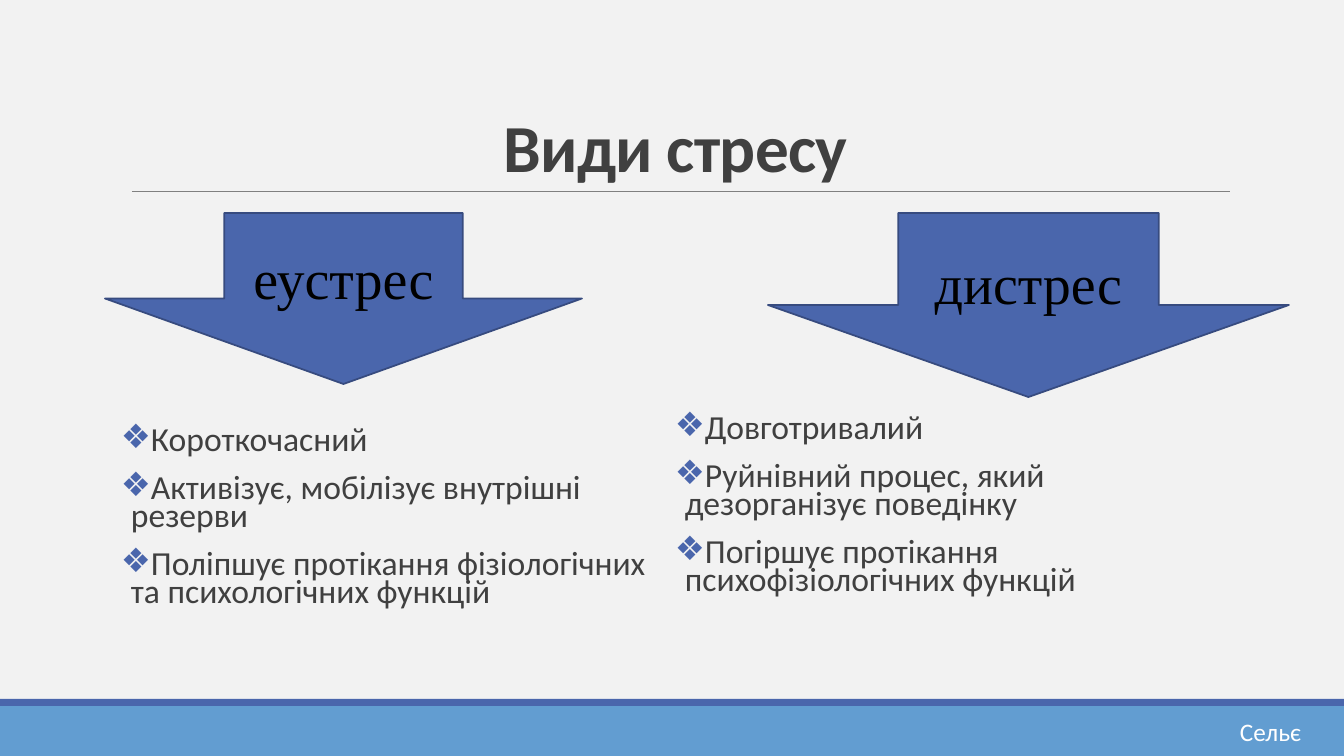
from lxml.etree import SubElement
from pptx import Presentation
from pptx.dml.color import RGBColor
from pptx.enum.shapes import MSO_CONNECTOR, MSO_SHAPE
from pptx.enum.text import MSO_ANCHOR, PP_ALIGN
from pptx.oxml.ns import qn
from pptx.util import Pt

TITLE = "Види стресу"
AUTHOR = "Сельє"
STRESS_KINDS = [
    {
        "name": "еустрес",
        "arrow": (105, 213, 477, 171),
        "traits_box": (121, 429, 554, 215),
        "traits": [
            "Короткочасний",
            "Активізує, мобілізує внутрішні резерви",
            "Поліпшує протікання фізіологічних та психологічних функцій",
        ],
    },
    {
        "name": "дистрес",
        "arrow": (768, 213, 521, 184),
        "traits_box": (675, 417, 554, 215),
        "traits": [
            "Довготривалий",
            "Руйнівний процес, який дезорганізує поведінку",
            "Погіршує протікання психофізіологічних функцій",
        ],
    },
]
COLORS = {
    "background": "F2F2F2",
    "footer": "629DD1",
    "accent": "4A66AC",
    "arrow_edge": "374B7F",
    "rule": "808080",
    "text": "404040",
    "arrow_text": "000000",
    "author": "FFFFFF",
}
WIDTH, HEIGHT = 1344, 756
FOOTER_TOP, STRIPE = 706, 7
HANG = 10
EMU_PER_PX = 914400 / 100.8


def px(*lengths):
    return [round(length * EMU_PER_PX) for length in lengths]


def color(key):
    return RGBColor.from_string(COLORS[key])


def add_block(slide, preset, box, fill, edge=None):
    block = slide.shapes.add_shape(preset, *px(*box))
    block.shadow.inherit = False
    block.fill.solid()
    block.fill.fore_color.rgb = color(fill)
    if edge:
        block.line.color.rgb = color(edge)
        block.line.width = Pt(1.25)
    else:
        block.line.fill.background()
    return block


def add_frame(slide, box, anchor=MSO_ANCHOR.TOP, wrap=True):
    frame = slide.shapes.add_textbox(*px(*box)).text_frame
    frame.word_wrap = wrap
    frame.vertical_anchor = anchor
    frame.margin_left = frame.margin_right = 0
    frame.margin_top = frame.margin_bottom = 0
    return frame


def add_text(paragraph, text, size, ink, font="Calibri", bold=False):
    run = paragraph.add_run()
    run.text = text
    run.font.name = font
    run.font.size = Pt(size)
    run.font.bold = bold
    run.font.color.rgb = color(ink)
    return run


def add_bullet(paragraph):
    properties = paragraph._p.get_or_add_pPr()
    hang, = px(HANG)
    properties.set("marL", str(hang))
    properties.set("indent", str(-hang))
    tint = SubElement(properties, qn("a:buClr"))
    SubElement(tint, qn("a:srgbClr"), val=COLORS["accent"])
    SubElement(properties, qn("a:buFont"), typeface="Calibri")
    SubElement(properties, qn("a:buChar"), char="❖")


def add_kind(slide, kind):
    arrow = add_block(slide, MSO_SHAPE.DOWN_ARROW, kind["arrow"], "accent", "arrow_edge")
    arrow.text_frame.vertical_anchor = MSO_ANCHOR.MIDDLE
    label = arrow.text_frame.paragraphs[0]
    label.alignment = PP_ALIGN.CENTER
    add_text(label, kind["name"], 40, "arrow_text", "Times New Roman")

    frame = add_frame(slide, kind["traits_box"])
    for index, trait in enumerate(kind["traits"]):
        paragraph = frame.add_paragraph() if index else frame.paragraphs[0]
        paragraph.line_spacing = 0.7
        paragraph.space_before = Pt(12)
        paragraph.space_after = Pt(2)
        add_bullet(paragraph)
        add_text(paragraph, trait, 24, "text")


def main():
    deck = Presentation()
    deck.slide_width, deck.slide_height = px(WIDTH, HEIGHT)
    slide = deck.slides.add_slide(deck.slide_layouts[6])
    slide.background.fill.solid()
    slide.background.fill.fore_color.rgb = color("background")

    add_block(slide, MSO_SHAPE.RECTANGLE, (0, FOOTER_TOP, WIDTH, HEIGHT - FOOTER_TOP), "footer")
    add_block(slide, MSO_SHAPE.RECTANGLE, (0, FOOTER_TOP - STRIPE, WIDTH, STRIPE), "accent")
    rule = slide.shapes.add_connector(MSO_CONNECTOR.STRAIGHT, *px(132, 191, 1230, 191))
    rule.line.color.rgb = color("rule")
    rule.line.width = Pt(0.5)
    SubElement(rule._element.spPr, qn("a:effectLst"))

    heading = add_frame(slide, (121, 31, 1109, 155), MSO_ANCHOR.BOTTOM).paragraphs[0]
    heading.alignment = PP_ALIGN.CENTER
    heading.line_spacing = 0.85
    title = add_text(heading, TITLE, 48, "text", bold=True)
    title.font._element.set("spc", "-50")

    for kind in STRESS_KINDS:
        add_kind(slide, kind)

    author = add_frame(slide, (1240, 716, 63, 30), wrap=False).paragraphs[0]
    add_text(author, AUTHOR, 18, "author")
    deck.save("out.pptx")


if __name__ == "__main__":
    main()
